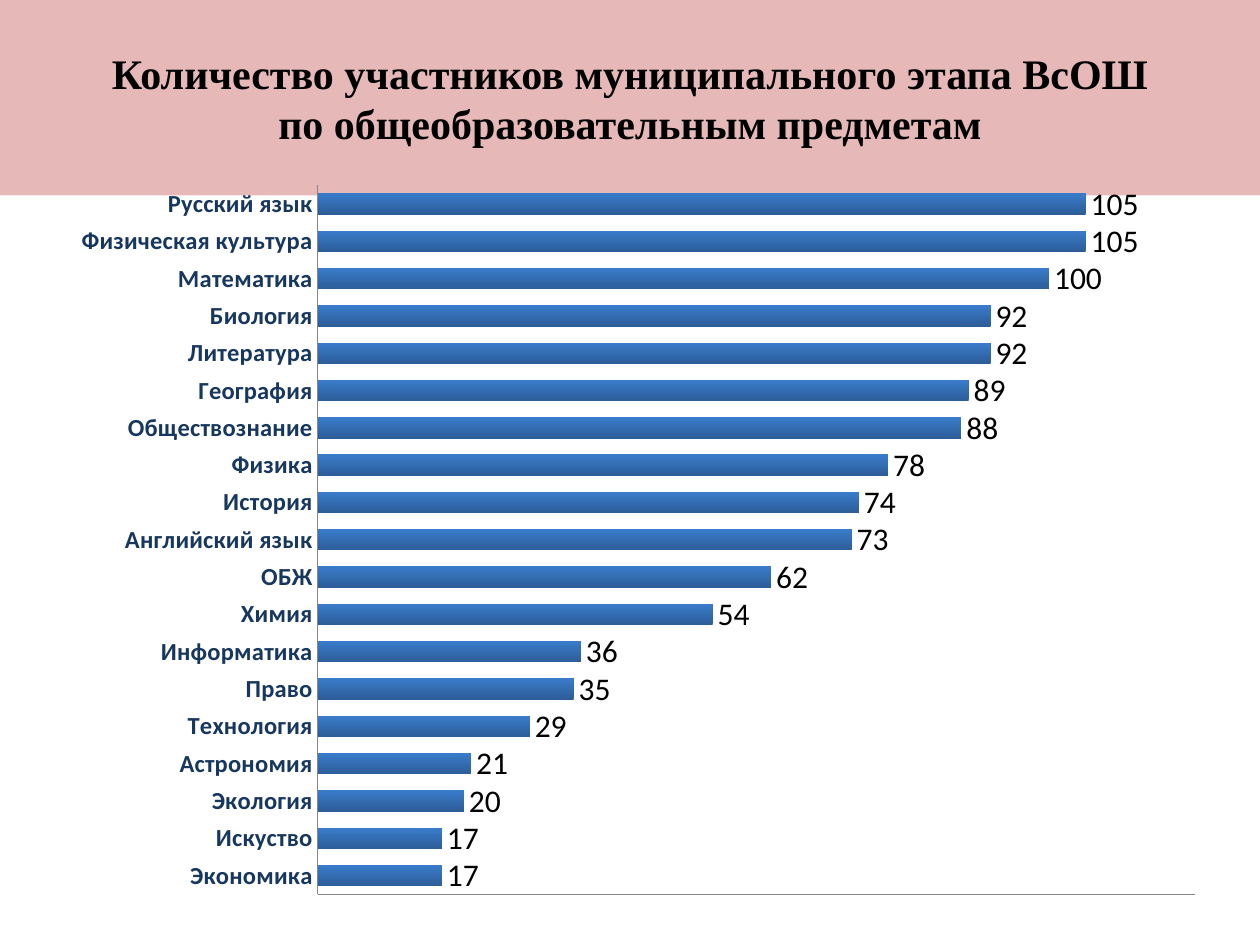
from dataclasses import dataclass

from lxml import etree
from pptx import Presentation
from pptx.chart.data import CategoryChartData
from pptx.dml.color import RGBColor
from pptx.enum.chart import XL_CHART_TYPE, XL_LABEL_POSITION, XL_TICK_LABEL_POSITION, XL_TICK_MARK
from pptx.enum.text import MSO_ANCHOR, PP_ALIGN
from pptx.oxml.ns import qn
from pptx.util import Inches, Pt

BAR = XL_CHART_TYPE.BAR_CLUSTERED
OUTSIDE_END = XL_LABEL_POSITION.OUTSIDE_END
NO_LABELS = XL_TICK_LABEL_POSITION.NONE
NO_TICKS = XL_TICK_MARK.NONE
MIDDLE = MSO_ANCHOR.MIDDLE
CENTER = PP_ALIGN.CENTER


@dataclass(frozen=True)
class Theme:
    band: RGBColor = RGBColor.from_string("E6B9B8")
    text: RGBColor = RGBColor.from_string("000000")
    subject: RGBColor = RGBColor.from_string("17375E")
    axis: RGBColor = RGBColor.from_string("868686")
    bar_bottom: RGBColor = RGBColor.from_string("2C5D98")
    bar_top: RGBColor = RGBColor.from_string("3A7CCB")
    title_font: str = "Times New Roman"
    chart_font: str = "Calibri"
    title_size: Pt = Pt(24)
    value_size: Pt = Pt(18)
    subject_size: Pt = Pt(14)


THEME = Theme()
TITLE = "Количество участников муниципального этапа ВсОШ\vпо общеобразовательным предметам"
PARTICIPANTS = {
    "Экономика": 17,
    "Искуство": 17,
    "Экология": 20,
    "Астрономия": 21,
    "Технология": 29,
    "Право": 35,
    "Информатика": 36,
    "Химия": 54,
    "ОБЖ": 62,
    "Английский язык": 73,
    "История": 74,
    "Физика": 78,
    "Обществознание": 88,
    "География": 89,
    "Литература": 92,
    "Биология": 92,
    "Математика": 100,
    "Физическая культура": 105,
    "Русский язык": 105,
}


def format_font(font, name, size, color, bold=False):
    font.name, font.size, font.bold = name, size, bold
    font.color.rgb = color


def add_title(slide):
    sp = slide.shapes.title
    sp.left, sp.top, sp.width, sp.height = Inches(0), Inches(0), Inches(10), Inches(1.55)
    sp.fill.solid()
    sp.fill.fore_color.rgb = THEME.band
    tf = sp.text_frame
    tf.text = TITLE
    tf.word_wrap = True
    tf.vertical_anchor = MIDDLE
    p = tf.paragraphs[0]
    p.alignment = CENTER
    for r in p.runs:
        format_font(r.font, THEME.title_font, THEME.title_size, THEME.text, True)


def set_inner_plot(chart, x, y, w, h):
    """Fix the plot area, given as fractions of the chart."""
    plot_area = chart.plots[0]._element.getparent()
    for old in plot_area.findall(qn("c:layout")):
        plot_area.remove(old)
    layout = etree.Element(qn("c:layout"))
    plot_area.insert(0, layout)
    manual = etree.SubElement(layout, qn("c:manualLayout"))
    settings = {"layoutTarget": "inner", "xMode": "edge", "yMode": "edge",
                "x": x, "y": y, "w": w, "h": h}
    for tag, value in settings.items():
        etree.SubElement(manual, qn(f"c:{tag}")).set("val", str(value))


def format_axis(axis):
    axis.major_tick_mark = axis.minor_tick_mark = NO_TICKS
    axis.has_major_gridlines = False
    axis.format.line.color.rgb = THEME.axis
    axis.format.line.width = Pt(0.75)


def add_participants_chart(slide):
    data = CategoryChartData()
    data.categories = list(PARTICIPANTS)
    data.add_series("Series 1", list(PARTICIPANTS.values()))
    chart = slide.shapes.add_chart(
        BAR, Inches(0.35), Inches(1.31), Inches(9.24), Inches(5.98), data).chart
    chart.has_legend = chart.has_title = False
    format_font(chart.font, THEME.chart_font, THEME.value_size, THEME.text)
    set_inner_plot(chart, 0.235, 0.027, 0.754, 0.941)

    # Axes
    subjects, counts = chart.category_axis, chart.value_axis
    for axis in (subjects, counts):
        format_axis(axis)
    format_font(subjects.tick_labels.font, THEME.chart_font, THEME.subject_size,
                THEME.subject, True)
    counts.minimum_scale, counts.maximum_scale = 0, 120
    counts.tick_label_position = NO_LABELS

    # Bars and their values
    plot = chart.plots[0]
    plot.gap_width = 75
    plot.vary_by_categories = False
    fill = plot.series[0].format.fill
    fill.gradient()
    fill.gradient_angle = 90
    for stop, color in zip(fill.gradient_stops, (THEME.bar_bottom, THEME.bar_top)):
        stop.color.rgb = color
    plot.has_data_labels = True
    labels = plot.data_labels
    labels.show_value = True
    labels.position = OUTSIDE_END
    format_font(labels.font, THEME.chart_font, THEME.value_size, THEME.text)


def main():
    prs = Presentation()
    prs.slide_width, prs.slide_height = Inches(10), Inches(7.5)
    slide = prs.slides.add_slide(prs.slide_layouts[5])
    add_title(slide)
    add_participants_chart(slide)
    prs.save("out.pptx")


if __name__ == "__main__":
    main()
